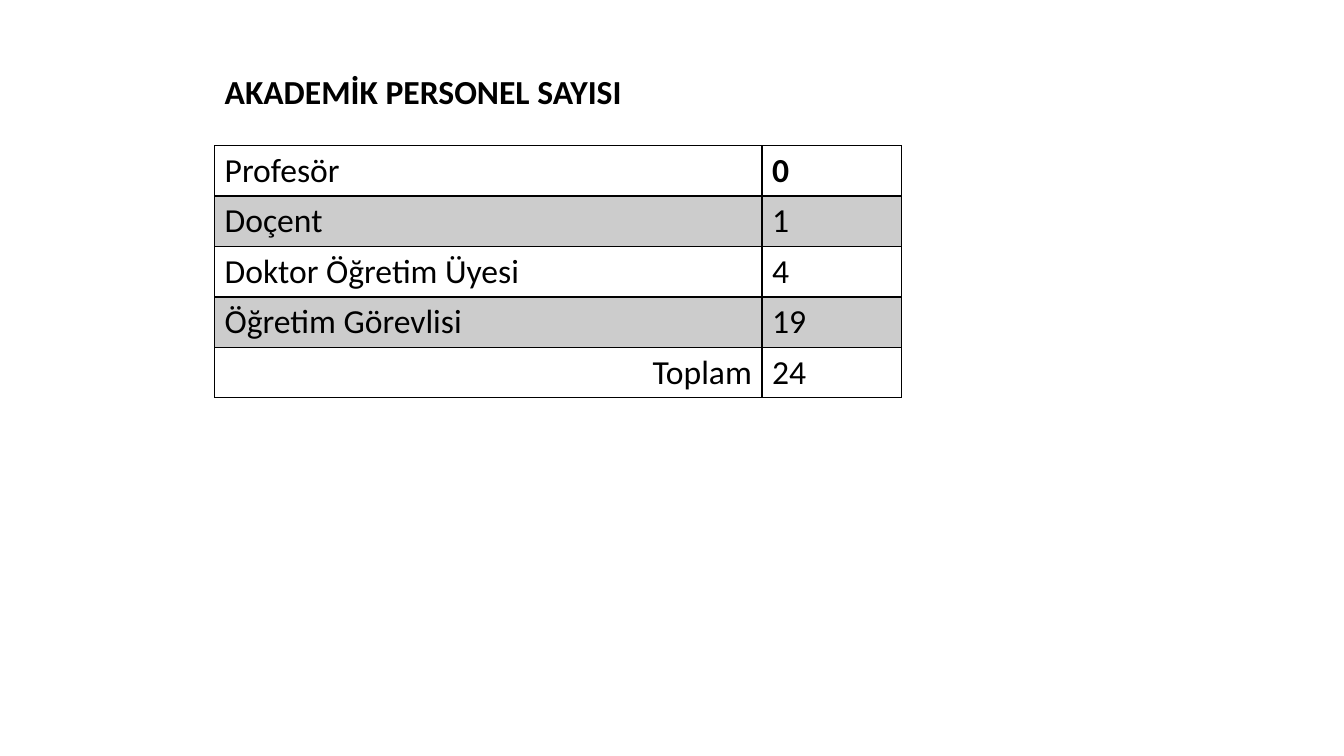
from lxml.etree import SubElement
from pptx import Presentation
from pptx.dml.color import RGBColor
from pptx.enum.text import MSO_ANCHOR, MSO_AUTO_SIZE, PP_ALIGN
from pptx.oxml.ns import qn
from pptx.util import Pt

FONT = "Calibri"
BLACK = "000000"
BAND_OPACITY = 20
LEFT = 153.3
ROW_HEIGHT = 36
COLUMN_WIDTHS = (391, 99.4)
STAFF_COUNTS = [
    ("Profesör", "0"),
    ("Doçent", "1"),
    ("Doktor Öğretim Üyesi", "4"),
    ("Öğretim Görevlisi", "19"),
    ("Toplam", "24"),
]


def color(value):
    return RGBColor.from_string(value)


def write(text_frame, text, bold=False, alignment=PP_ALIGN.LEFT):
    paragraph = text_frame.paragraphs[0]
    paragraph.alignment = alignment
    run = paragraph.add_run()
    run.text = text
    run.font.name = FONT
    run.font.size = Pt(24)
    run.font.bold = bold
    run.font.color.rgb = color(BLACK)


def set_borders(cell, top, bottom):
    """Draw black cell borders; top and bottom are widths in points."""
    properties = cell._tc.get_or_add_tcPr()
    for side, width in (("L", 1), ("R", 1), ("T", top), ("B", bottom)):
        line = SubElement(properties, qn(f"a:ln{side}"), w=str(Pt(width)))
        fill = SubElement(line, qn("a:solidFill"))
        SubElement(fill, qn("a:srgbClr"), val=BLACK)


def fill_band(cell):
    """Fill the cell with translucent black."""
    cell.fill.solid()
    cell.fill.fore_color.rgb = color(BLACK)
    fill_color = cell._tc.tcPr.find(qn("a:solidFill")).find(qn("a:srgbClr"))
    SubElement(fill_color, qn("a:alpha"), val=str(BAND_OPACITY * 1000))


def add_title(slide, left, top, width, height):
    title = slide.shapes.title
    title.left, title.top = Pt(left), Pt(top)
    title.width, title.height = Pt(width), Pt(height)
    text_frame = title.text_frame
    text_frame.word_wrap = False
    text_frame.auto_size = MSO_AUTO_SIZE.SHAPE_TO_FIT_TEXT
    text_frame.vertical_anchor = MSO_ANCHOR.TOP
    write(text_frame, "AKADEMİK PERSONEL SAYISI", bold=True)


def add_staff_table(slide, left, top):
    row_count = len(STAFF_COUNTS)
    table = slide.shapes.add_table(
        row_count, len(COLUMN_WIDTHS), Pt(left), Pt(top),
        Pt(sum(COLUMN_WIDTHS)), Pt(ROW_HEIGHT * row_count),
    ).table
    for column, width in zip(table.columns, COLUMN_WIDTHS):
        column.width = Pt(width)
    for row_index, values in enumerate(STAFF_COUNTS):
        table.rows[row_index].height = Pt(ROW_HEIGHT)
        is_total = row_index == row_count - 1
        for column_index, value in enumerate(values):
            cell = table.cell(row_index, column_index)
            is_label = column_index == 0
            write(
                cell.text_frame, value,
                bold=row_index == 0 and not is_label,
                alignment=PP_ALIGN.RIGHT if is_total and is_label else PP_ALIGN.LEFT,
            )
            set_borders(
                cell,
                top=2 if row_index == 1 else 1,
                bottom=2 if row_index == 0 else 1,
            )
            if row_index % 2:
                fill_band(cell)
            else:
                cell.fill.background()


def main():
    presentation = Presentation()
    presentation.slide_width, presentation.slide_height = Pt(960), Pt(540)
    slide = presentation.slides.add_slide(presentation.slide_layouts[5])
    add_title(slide, LEFT, 47, 301, 36)
    add_staff_table(slide, LEFT, 104)
    presentation.save("out.pptx")


if __name__ == "__main__":
    main()
